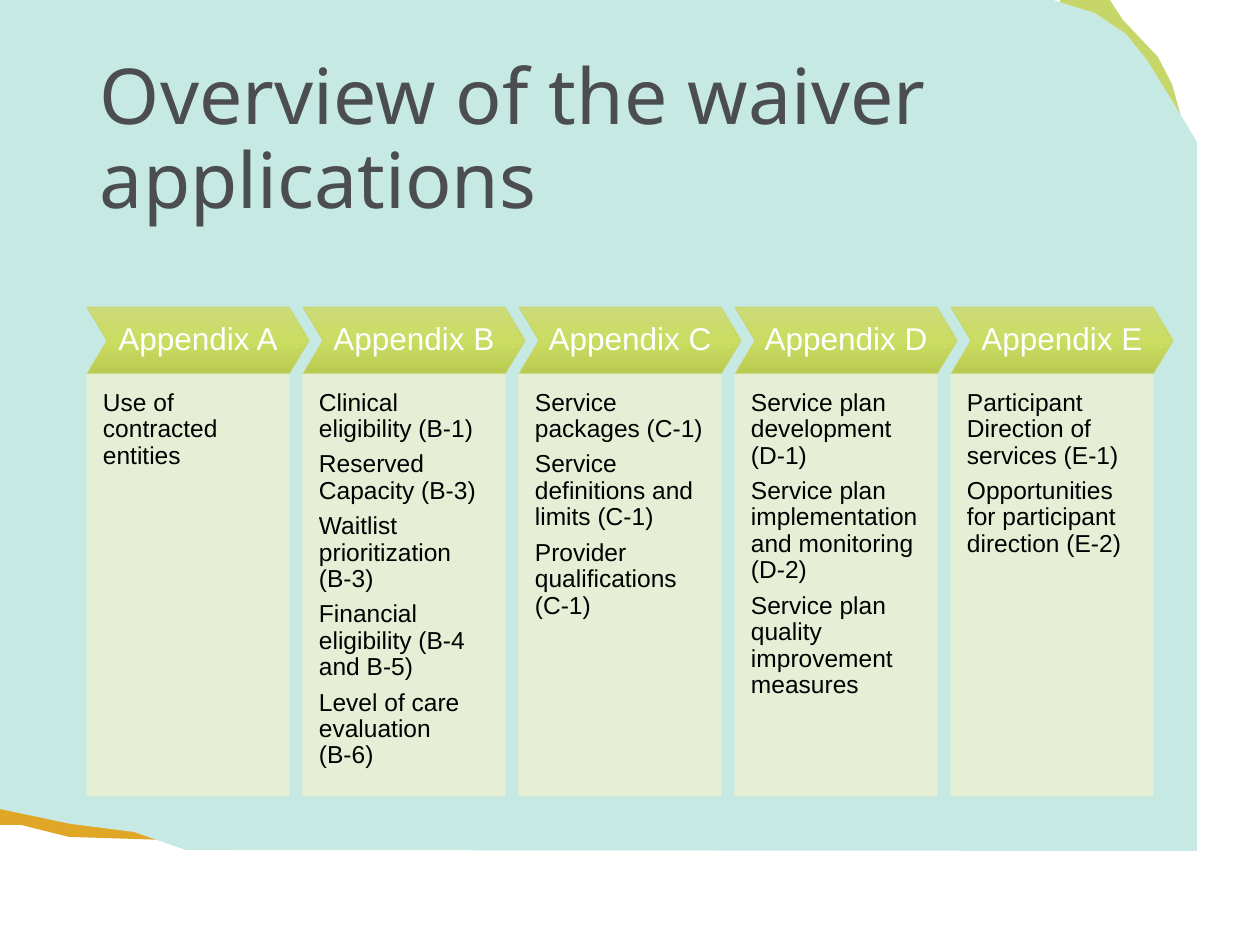
from copy import deepcopy

from lxml import etree
from pptx import Presentation
from pptx.dml.color import RGBColor
from pptx.enum.shapes import MSO_SHAPE
from pptx.enum.text import MSO_ANCHOR, PP_ALIGN
from pptx.oxml.ns import qn
from pptx.util import Pt

CHEVRON, RECTANGLE = MSO_SHAPE.CHEVRON, MSO_SHAPE.RECTANGLE
TOP, MIDDLE = MSO_ANCHOR.TOP, MSO_ANCHOR.MIDDLE
LEFT, CENTER = PP_ALIGN.LEFT, PP_ALIGN.CENTER

EMU_PER_PX = 914400 / 126
FIRST_LEFT, COLUMN_PITCH = 87, 216
HEADER_TOP, HEADER_WIDTH, HEADER_HEIGHT = 307, 222, 67
BODY_WIDTH, BODY_HEIGHT = 202, 422
HEADER_GRADIENT = ["CDDB7B", "CADC62", "B8CA51"]

BACKDROP = [
    ("E0A626", [(0, 793), (48, 790), (165, 800), (165, 840), (69, 837),
                (21, 825), (0, 825)]),
    ("C6D668", [(1067, 54), (1060, 0), (1110, 0), (1123, 20), (1158, 57),
                (1172, 84), (1186, 134)]),
    ("C6E9E3", [(0, 0), (1053, 0), (1095, 13), (1126, 34), (1147, 60),
                (1173, 102), (1197, 142), (1197, 851), (186, 850),
                (134, 832), (71, 824), (0, 809)]),
]

APPENDICES = {
    "Appendix A": ["Use of contracted entities"],
    "Appendix B": [
        "Clinical eligibility (B-1)",
        "Reserved Capacity (B-3)",
        "Waitlist prioritization (B-3)",
        "Financial eligibility (B-4 and B-5)",
        "Level of care evaluation (B-6)",
    ],
    "Appendix C": [
        "Service packages (C-1)",
        "Service definitions and limits (C-1)",
        "Provider qualifications (C-1)",
    ],
    "Appendix D": [
        "Service plan development (D-1)",
        "Service plan implementation and monitoring (D-2)",
        "Service plan quality improvement measures",
    ],
    "Appendix E": [
        "Participant Direction of services (E-1)",
        "Opportunities for participant direction (E-2)",
    ],
}


def px(length):
    """Turn pixels into EMU."""
    return round(length * EMU_PER_PX)


def rgb(value):
    """Turn a hex string into a colour."""
    return RGBColor.from_string(value)


def write(shape, lines, *, size, color, font="Arial", align=LEFT, anchor=TOP,
          insets=(13, 6, 13, 6), space_after=0, wrap=True):
    """Fill a shape with one formatted paragraph per line."""
    frame = shape.text_frame
    frame.word_wrap = wrap
    frame.vertical_anchor = anchor
    (frame.margin_left, frame.margin_top,
     frame.margin_right, frame.margin_bottom) = map(px, insets)
    for number, line in enumerate(lines):
        paragraph = frame.add_paragraph() if number else frame.paragraphs[0]
        paragraph.alignment = align
        paragraph.line_spacing = 0.9
        paragraph.space_after = Pt(space_after)
        run = paragraph.add_run()
        run.text = line
        run.font.name = font
        run.font.size = Pt(size)
        run.font.color.rgb = rgb(color)


def add_backdrop(slide, color, points):
    """Draw one filled outline of the torn-paper backdrop."""
    builder = slide.shapes.build_freeform(*points[0], scale=EMU_PER_PX)
    builder.add_line_segments(points[1:], close=True)
    outline = builder.convert_to_shape()
    outline.shadow.inherit = False
    outline.fill.solid()
    outline.fill.fore_color.rgb = rgb(color)
    outline.line.fill.background()


def add_panel(slide, kind, left, top, width, height, line_color):
    """Add a preset shape with a thin line and no shadow."""
    panel = slide.shapes.add_shape(kind, px(left), px(top), px(width), px(height))
    panel.shadow.inherit = False
    panel.line.color.rgb = rgb(line_color)
    panel.line.width = Pt(0.5)
    return panel


def shade(shape, colors):
    """Give a shape a top-to-bottom gradient with evenly spaced stops."""
    shape.fill.gradient()
    shape.fill.gradient_angle = 270
    stop_list = shape._element.spPr.find(qn("a:gradFill")).find(qn("a:gsLst"))
    while len(stop_list) < len(colors):
        stop_list.append(deepcopy(stop_list[0]))
    for number, (stop, color) in enumerate(zip(shape.fill.gradient_stops, colors)):
        stop.position = number / (len(colors) - 1)
        stop.color.rgb = rgb(color)


def set_opacity(shape, percent):
    """Make the solid fill and line of a shape partly transparent."""
    for color in shape._element.spPr.iter(qn("a:srgbClr")):
        etree.SubElement(color, qn("a:alpha"), val=str(percent * 1000))


def add_header(slide, left, name):
    """Add the chevron that names an appendix."""
    header = add_panel(slide, CHEVRON, left, HEADER_TOP, HEADER_WIDTH,
                       HEADER_HEIGHT, "C6D668")
    header.adjustments[0] = 0.3
    shade(header, HEADER_GRADIENT)
    write(header, [name], size=18, color="FFFFFF", align=CENTER, anchor=MIDDLE,
          insets=(9, 9, 9, 9), wrap=False)


def add_body(slide, left, topics):
    """Add the box that lists the topics of an appendix."""
    body = add_panel(slide, RECTANGLE, left, HEADER_TOP + HEADER_HEIGHT,
                     BODY_WIDTH, BODY_HEIGHT, "EAF0D4")
    body.fill.solid()
    body.fill.fore_color.rgb = rgb("EAF0D4")
    set_opacity(body, 90)
    write(body, topics, size=14, color="000000", insets=(16, 16, 16, 32),
          space_after=5)


def main():
    """Build and save the slide."""
    presentation = Presentation()
    presentation.slide_width, presentation.slide_height = px(1260), px(945)
    slide = presentation.slides.add_slide(presentation.slide_layouts[6])
    for color, points in BACKDROP:
        add_backdrop(slide, color, points)
    title = slide.shapes.add_textbox(px(87), px(50), px(1086), px(183))
    write(title, ["Overview of the waiver applications"], size=44,
          color="4B4D4F", font="Noto Sans", anchor=MIDDLE)
    for number, (name, topics) in enumerate(APPENDICES.items()):
        left = FIRST_LEFT + number * COLUMN_PITCH
        add_header(slide, left, name)
        add_body(slide, left, topics)
    presentation.save("out.pptx")


if __name__ == "__main__":
    main()
